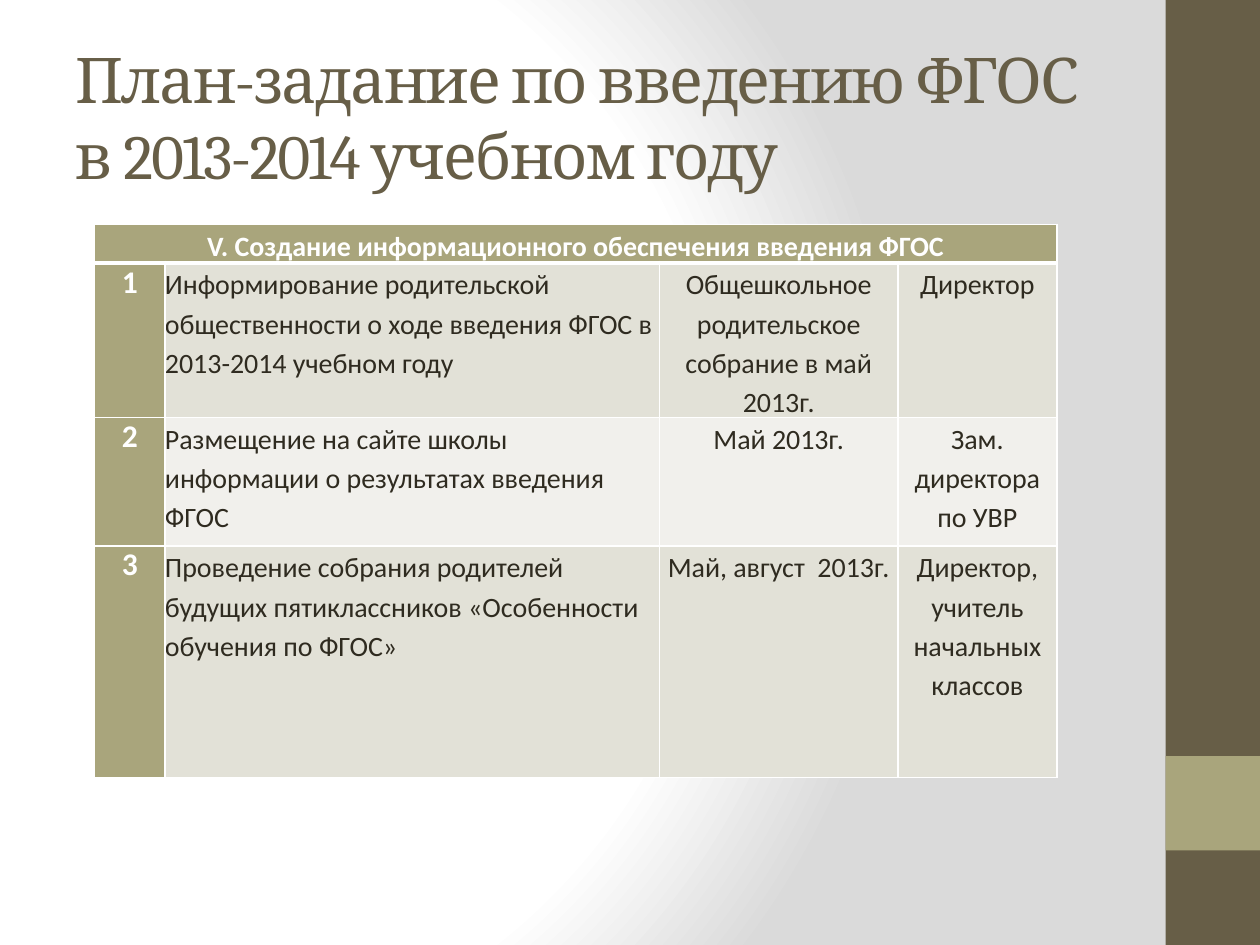
from typing import NamedTuple

from lxml import etree
from pptx import Presentation
from pptx.dml.color import RGBColor
from pptx.enum import shapes, text
from pptx.oxml import ns, parse_xml
from pptx.util import Pt

DARK, OLIVE, INK, WHITE = "675E47", "A9A57C", "2F2B20", "FFFFFF"
BANDS = ("E2E1D7", "F1F0EC")
HEADING = "V. Создание информационного обеспечения введения ФГОС"
COLUMN_WIDTHS = (40.3, 282.7, 136.1, 90.9)
HEADER_HEIGHT = 14.4
CENTER, LEFT = text.PP_ALIGN.CENTER, text.PP_ALIGN.LEFT


class Task(NamedTuple):
    name: str
    term: str
    owner: str
    height: float


TASKS = (
    Task("Информирование родительской общественности о ходе введения ФГОС в 2013-2014 учебном году",
         "Общешкольное родительское собрание в май 2013г.", "Директор", 73.4),
    Task("Размещение на сайте школы информации о результатах введения  ФГОС",
         "Май 2013г.", "Зам. директора по УВР", 73.4),
    Task("Проведение собрания родителей будущих пятиклассников «Особенности обучения по ФГОС»",
         "Май, август  2013г.", "Директор, учитель начальных классов", 132.5),
)


def rgb(value: str) -> RGBColor:
    return RGBColor.from_string(value)


def set_background(s) -> None:
    """Fill the slide with a radial gradient, white at left to grey at right."""
    fill = s.background.fill
    fill.gradient()
    grad = s.element.find(".//" + ns.qn("a:gradFill"))
    stops = "".join(
        f'<a:gs pos="{pos}000"><a:srgbClr val="{color}"/></a:gs>'
        for pos, color in ((0, WHITE), (75, WHITE), (100, "DADADA")))
    grad.getparent().replace(grad, parse_xml(
        f'<a:gradFill {ns.nsdecls("a")} rotWithShape="1"><a:gsLst>{stops}</a:gsLst>'
        '<a:path path="circle"><a:fillToRect l="20000" t="50000" r="100000" b="50000"/>'
        '</a:path></a:gradFill>'))


def add_block(s, left: float, top: float, width: float, height: float, color: str) -> None:
    sp = s.shapes.add_shape(shapes.MSO_SHAPE.RECTANGLE, Pt(left), Pt(top), Pt(width), Pt(height))
    sp.shadow.inherit = False
    sp.fill.solid()
    sp.fill.fore_color.rgb = rgb(color)
    sp.line.fill.background()


def add_run(p, content: str, font: str, size: float, color: str, bold: bool = False):
    r = p.add_run()
    r.text = content
    r.font.name, r.font.size, r.font.bold = font, Pt(size), bold
    r.font.color.rgb = rgb(color)
    return r


def add_title(s) -> None:
    sp = s.shapes.add_textbox(Pt(36), Pt(21.6), Pt(600), Pt(90))
    tf = sp.text_frame
    tf.word_wrap = True
    tf.vertical_anchor = text.MSO_ANCHOR.MIDDLE
    r = add_run(tf.paragraphs[0], "План-задание по введению ФГОС в 2013-2014 учебном году",
                "Cambria", 36, DARK)
    r.font._element.set("spc", "-100")


def set_borders(cell, top: float = 1, bottom: float = 1) -> None:
    tc_pr = cell._tc.get_or_add_tcPr()
    for side, width in (("L", 1), ("R", 1), ("T", top), ("B", bottom)):
        ln = etree.SubElement(tc_pr, ns.qn(f"a:ln{side}"), w=str(Pt(width)))
        solid = etree.SubElement(ln, ns.qn("a:solidFill"))
        etree.SubElement(solid, ns.qn("a:srgbClr"), val=WHITE)


def fill_cell(cell, content: str, fill: str, color: str = INK, size: float = 16,
              bold: bool = False, align=CENTER, spacing: float = 1.15) -> None:
    cell.margin_left = cell.margin_right = cell.margin_top = cell.margin_bottom = 0
    cell.fill.solid()
    cell.fill.fore_color.rgb = rgb(fill)
    p = cell.text_frame.paragraphs[0]
    p.alignment, p.line_spacing = align, spacing
    add_run(p, content, "Calibri", size, color, bold)


def add_plan(s) -> None:
    heights = [HEADER_HEIGHT] + [task.height for task in TASKS]
    table = s.shapes.add_table(len(heights), len(COLUMN_WIDTHS), Pt(54), Pt(128.2),
                               Pt(sum(COLUMN_WIDTHS)), Pt(sum(heights))).table
    for column, width in zip(table.columns, COLUMN_WIDTHS):
        column.width = Pt(width)
    for i, (row, height) in enumerate(zip(table.rows, heights)):
        row.height = Pt(height)
        for cell in row.cells:
            set_borders(cell, top=3 if i == 1 else 1, bottom=3 if i == 0 else 1)

    header = table.cell(0, 0)
    header.merge(table.cell(0, len(COLUMN_WIDTHS) - 1))
    fill_cell(header, HEADING, OLIVE, WHITE, bold=True)
    for i, task in enumerate(TASKS, 1):
        band = BANDS[(i - 1) % 2]
        fill_cell(table.cell(i, 0), str(i), OLIVE, WHITE, 18, True, spacing=1.0)
        fill_cell(table.cell(i, 1), task.name, band, align=LEFT)
        fill_cell(table.cell(i, 2), task.term, band)
        fill_cell(table.cell(i, 3), task.owner, band)


def main() -> None:
    prs = Presentation()
    prs.slide_width, prs.slide_height = Pt(720), Pt(540)
    s = prs.slides.add_slide(prs.slide_layouts[6])
    set_background(s)
    add_block(s, 666, 0, 54, 540, DARK)
    add_block(s, 666, 432, 54, 54, OLIVE)
    add_title(s)
    add_plan(s)
    prs.save("out.pptx")


if __name__ == "__main__":
    main()
